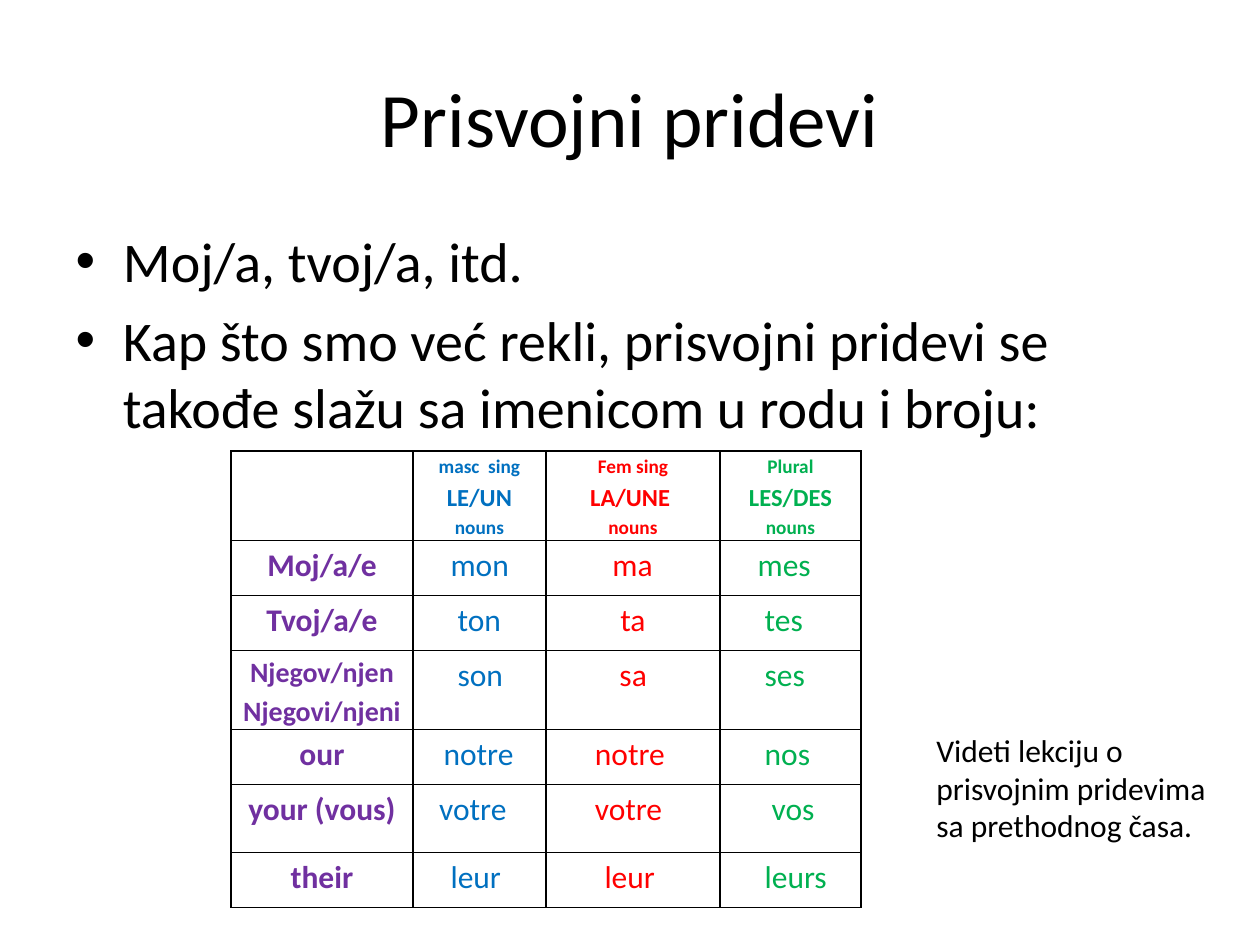
from dataclasses import dataclass

from lxml.etree import SubElement
from pptx import Presentation
from pptx.dml.color import RGBColor
from pptx.enum.text import MSO_ANCHOR, MSO_AUTO_SIZE, PP_ALIGN
from pptx.oxml.ns import qn
from pptx.util import Pt


@dataclass(frozen=True)
class Theme:
    font: str = "Calibri"
    black: str = "000000"
    owner: str = "7030A0"
    masculine: str = "0070C0"
    feminine: str = "FF0000"
    plural: str = "00B050"
    title_size: float = 44
    body_size: float = 32
    word_size: float = 18
    compact_size: float = 16
    article_size: float = 14
    label_size: float = 11
    line_spacing: float = 1.15
    border_width: float = 1
    cell_margin: float = 5


THEME = Theme()
COLUMN_WIDTHS = (104, 76, 99.5, 80.5)
ROW_HEIGHTS = (51, 31.5, 31.5, 45, 31.5, 39, 31.5)
GENDER_COLORS = (THEME.masculine, THEME.feminine, THEME.plural)

# Each heading is a list of paragraphs, each paragraph a list of (text, size) runs.
LABEL, ARTICLE = THEME.label_size, THEME.article_size
HEADINGS = (
    [[("masc  sing", LABEL)], [("LE/UN", ARTICLE)], [("nouns", LABEL)]],
    [[("Fem sing", LABEL)], [("LA/UNE ", ARTICLE)], [("nouns", LABEL)]],
    [[("Plural", LABEL)], [("LES/DES", ARTICLE), (" nouns", LABEL)]],
)

# Owner lines, then (adjective, indent in points) for each gender.
ADJECTIVES = (
    (["Moj/a/e"], (("mon", 16.5), ("ma", 33), ("mes", 16.5))),
    (["Tvoj/a/e"], (("ton", 20.5), ("ta", 37.5), ("tes", 20.5))),
    (["Njegov/njen", "Njegovi/njeni"], (("son", 20.5), ("sa", 37), ("ses", 20.5))),
    (["our"], (("notre", 12.5), ("notre", 23), ("nos", 20.5))),
    (["your (vous)"], (("votre", 10), ("votre", 23), ("vos", 24.5))),
    (["their"], (("leur", 16.5), ("leur", 28.5), ("leurs", 20.5))),
)


class SlideBuilder:
    def __init__(self, slide, theme):
        self.slide = slide
        self.theme = theme

    def add_run(self, paragraph, text, size, color, bold=False):
        run = paragraph.add_run()
        run.text = text
        font = run.font
        font.name = self.theme.font
        font.size = Pt(size)
        font.bold = bold
        font.color.rgb = RGBColor.from_string(color)

    def fill_paragraphs(self, text_frame, paragraphs, color, bold=False,
                        alignment=None, line_spacing=None):
        """Write paragraphs given as lists of (text, size) runs."""
        for index, runs in enumerate(paragraphs):
            paragraph = text_frame.add_paragraph() if index else text_frame.paragraphs[0]
            paragraph.alignment = alignment
            paragraph.line_spacing = line_spacing
            for text, size in runs:
                self.add_run(paragraph, text, size, color, bold)

    def place(self, shape, left, top, width, height):
        shape.left, shape.top = Pt(left), Pt(top)
        shape.width, shape.height = Pt(width), Pt(height)

    def add_title(self, text, *box):
        title = self.slide.shapes.title
        self.place(title, *box)
        title.text_frame.vertical_anchor = MSO_ANCHOR.MIDDLE
        self.fill_paragraphs(title.text_frame, [[(text, self.theme.title_size)]],
                             self.theme.black, alignment=PP_ALIGN.CENTER)

    def add_bullets(self, items, *box):
        body = self.slide.placeholders[1]
        self.place(body, *box)
        self.fill_paragraphs(body.text_frame,
                             [[(item, self.theme.body_size)] for item in items],
                             self.theme.black)

    def add_note(self, text, *box):
        note = self.slide.shapes.add_textbox(*map(Pt, box))
        note.text_frame.word_wrap = True
        note.text_frame.auto_size = MSO_AUTO_SIZE.SHAPE_TO_FIT_TEXT
        self.fill_paragraphs(note.text_frame, [[(text, self.theme.word_size)]],
                             self.theme.black)

    def add_table(self, left, top, column_widths, row_heights):
        frame = self.slide.shapes.add_table(
            len(row_heights), len(column_widths), Pt(left), Pt(top),
            Pt(sum(column_widths)), Pt(sum(row_heights)))
        table = frame.table
        table.first_row = table.horz_banding = False
        for column, width in zip(table.columns, column_widths):
            column.width = Pt(width)
        for row, height in zip(table.rows, row_heights):
            row.height = Pt(height)
        for cell in table.iter_cells():
            self.format_cell(cell)
        return table

    def format_cell(self, cell):
        cell.margin_left = cell.margin_right = Pt(self.theme.cell_margin)
        cell.margin_top = cell.margin_bottom = 0
        properties = cell._tc.get_or_add_tcPr()
        for side in ("lnL", "lnR", "lnT", "lnB"):
            line = SubElement(properties, qn(f"a:{side}"),
                              w=str(Pt(self.theme.border_width)))
            fill = SubElement(line, qn("a:solidFill"))
            SubElement(fill, qn("a:srgbClr"), val=self.theme.black)
        SubElement(properties, qn("a:noFill"))

    def write_heading(self, cell, paragraphs, color):
        self.fill_paragraphs(cell.text_frame, paragraphs, color, True,
                             PP_ALIGN.CENTER, self.theme.line_spacing)

    def write_adjective(self, cell, word, indent, color):
        cell.margin_left = Pt(self.theme.cell_margin + indent)
        self.fill_paragraphs(cell.text_frame, [[(word, self.theme.word_size)]], color,
                             line_spacing=self.theme.line_spacing)


def main():
    presentation = Presentation()
    presentation.slide_width, presentation.slide_height = Pt(720), Pt(540)
    slide = presentation.slides.add_slide(presentation.slide_layouts[1])
    builder = SlideBuilder(slide, THEME)

    builder.add_title("Prisvojni pridevi", 36, 21.6, 648, 90)
    builder.add_bullets(
        ["Moj/a, tvoj/a, itd.",
         "Kap što smo već rekli, prisvojni pridevi se takođe slažu sa imenicom u rodu i broju:"],
        36, 126, 648, 356.4)

    table = builder.add_table(132, 257.75, COLUMN_WIDTHS, ROW_HEIGHTS)
    for column, (heading, color) in enumerate(zip(HEADINGS, GENDER_COLORS), 1):
        builder.write_heading(table.cell(0, column), heading, color)
    for row, (owners, words) in enumerate(ADJECTIVES, 1):
        size = THEME.compact_size if len(owners) > 1 else THEME.word_size
        builder.write_heading(table.cell(row, 0), [[(owner, size)] for owner in owners],
                              THEME.owner)
        for column, ((word, indent), color) in enumerate(zip(words, GENDER_COLORS), 1):
            builder.write_adjective(table.cell(row, column), word, indent, color)

    builder.add_note("Videti lekciju o prisvojnim pridevima sa prethodnog časa.",
                     528, 414, 186, 72.7)
    presentation.save("out.pptx")


if __name__ == "__main__":
    main()
